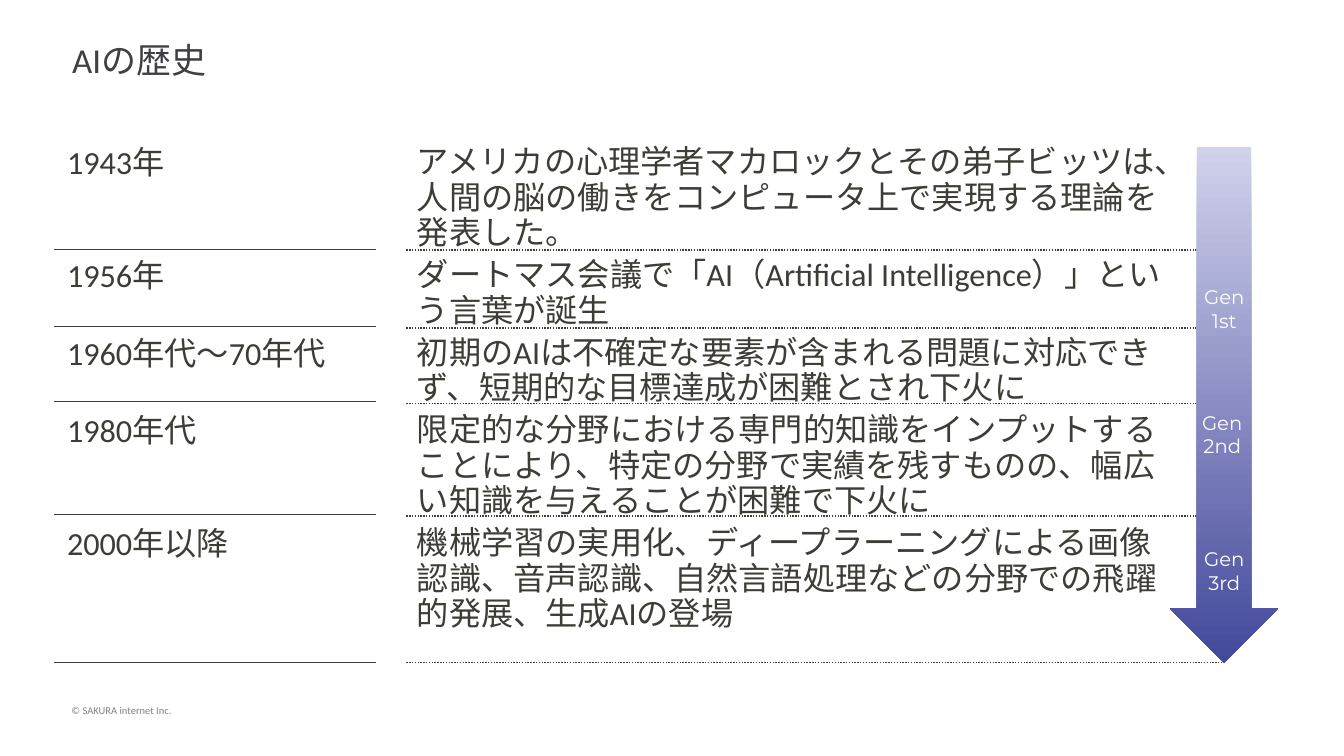
from dataclasses import dataclass

from lxml.etree import SubElement
from pptx import Presentation
from pptx.dml.color import RGBColor
from pptx.enum.dml import MSO_LINE
from pptx.enum.shapes import MSO_CONNECTOR, MSO_SHAPE
from pptx.enum.text import MSO_ANCHOR, MSO_AUTO_SIZE, PP_ALIGN
from pptx.oxml.ns import qn
from pptx.util import Pt

INK = RGBColor(0x3D, 0x3C, 0x36)
TITLE_GREY = RGBColor(0x40, 0x40, 0x44)
FOOTER_GREY = RGBColor(0x80, 0x80, 0x88)
WHITE = RGBColor(0xFF, 0xFF, 0xFF)
ARROW_TOP = RGBColor(0xD1, 0xD2, 0xEB)
ARROW_BOTTOM = RGBColor(0x43, 0x48, 0x9B)

LINE_HEIGHT = 50.4
ROW_GAP = 10


@dataclass
class Era:
    year: str
    event: str
    lines: int
    year_rule: float
    event_rule: float


@dataclass
class Generation:
    ordinal: str
    left: float
    top: float


ERAS = [
    Era("1943年", "アメリカの心理学者マカロックとその弟子ビッツは、人間の脳の働きをコンピュータ上で実現する理論を発表した。",
        3, 356.4, 357.1),
    Era("1956年", "ダートマス会議で「AI（Artificial Intelligence）」という言葉が誕生",
        2, 466.6, 468.7),
    Era("1960年代～70年代", "初期のAIは不確定な要素が含まれる問題に対応できず、短期的な目標達成が困難とされ下火に",
        2, 573.8, 576.7),
    Era("1980年代", "限定的な分野における専門的知識をインプットすることにより、特定の分野で実績を残すものの、幅広い知識を与えることが困難で下火に",
        3, 735.1, 737.3),
    Era("2000年以降", "機械学習の実用化、ディープラーニングによる画像認識、音声認識、自然言語処理などの分野での飛躍的発展、生成AIの登場",
        3, 946.8, 946.8),
]

GENERATIONS = [
    Generation("1st", 1710.7, 403.9),
    Generation("2nd", 1707.8, 583.2),
    Generation("3rd", 1710.7, 778.3),
]


def format_text(tf, size: float, color: RGBColor, font: str = "Calibri",
                align: PP_ALIGN = PP_ALIGN.LEFT) -> None:
    for p in tf.paragraphs:
        p.alignment = align
        for r in p.runs:
            r.font.size = Pt(size)
            r.font.name = font
            r.font.color.rgb = color


def add_text(s, left: float, top: float, width: float, height: float, text: str):
    tf = s.shapes.add_textbox(Pt(left), Pt(top), Pt(width), Pt(height)).text_frame
    tf.word_wrap = True
    tf.text = text
    return tf


def add_column(s, left: float, top: float, width: float, height: float,
               texts: list[str], gaps: list[float]) -> None:
    tf = add_text(s, left, top, width, height, "\n".join(texts))
    tf.margin_left = tf.margin_top = tf.margin_right = tf.margin_bottom = 0
    format_text(tf, 46, INK)
    for p in tf.paragraphs:
        p.line_spacing = Pt(LINE_HEIGHT)
    for p, gap in zip(tf.paragraphs[:-1], gaps):
        p.space_after = Pt(gap)


def add_rule(s, left: float, right: float, y: float, dash: MSO_LINE) -> None:
    sp = s.shapes.add_connector(MSO_CONNECTOR.STRAIGHT, Pt(left), Pt(y), Pt(right), Pt(y))
    sp.line.color.rgb = INK
    sp.line.width = Pt(2)
    sp.line.dash_style = dash
    SubElement(sp._element.spPr, qn("a:effectLst"))


def add_arrow(s) -> None:
    sp = s.shapes.add_shape(MSO_SHAPE.DOWN_ARROW, Pt(1670.4), Pt(210.2), Pt(155.5), Pt(736.6))
    sp.shadow.inherit = False
    sp.line.fill.background()
    sp.fill.gradient()
    sp.fill.gradient_angle = 270
    for stop, color in zip(sp.fill.gradient_stops, (ARROW_TOP, ARROW_BOTTOM)):
        stop.color.rgb = color


def add_generation(s, gen: Generation) -> None:
    tf = add_text(s, gen.left, gen.top, 75.6, 74.9, f"Gen\n{gen.ordinal}")
    tf.word_wrap = False
    format_text(tf, 28, WHITE, "Montserrat", PP_ALIGN.CENTER)


def add_title(s, text: str) -> None:
    sp = s.shapes.title
    sp.left, sp.top, sp.width, sp.height = Pt(95.8), Pt(57.6), Pt(1728), Pt(75.6)
    tf = sp.text_frame
    tf.text = text
    tf.auto_size = MSO_AUTO_SIZE.NONE
    tf.vertical_anchor = MSO_ANCHOR.TOP
    tf.paragraphs[0].line_spacing = 0.9
    format_text(tf, 50, TITLE_GREY)


def main() -> None:
    prs = Presentation()
    prs.slide_width, prs.slide_height = Pt(1919.52), Pt(1080)
    s = prs.slides.add_slide(prs.slide_layouts[5])
    add_title(s, "AIの歴史")
    footer = add_text(s, 95, 1002.2, 492.5, 25.2, "© SAKURA internet Inc.")
    format_text(footer, 15, FOOTER_GREY)

    add_column(s, 95.8, 208.8, 429.8, 596.9, [era.year for era in ERAS],
               [(era.lines - 1) * LINE_HEIGHT + ROW_GAP for era in ERAS])
    add_column(s, 595.4, 207.4, 1081.4, 698.4, [era.event for era in ERAS],
               [ROW_GAP] * len(ERAS))
    for era in ERAS:
        add_rule(s, 77.8, 537.1, era.year_rule, MSO_LINE.SOLID)
        add_rule(s, 580.3, 1743.8, era.event_rule, MSO_LINE.ROUND_DOT)

    add_arrow(s)
    for gen in GENERATIONS:
        add_generation(s, gen)
    prs.save("out.pptx")


if __name__ == "__main__":
    main()
